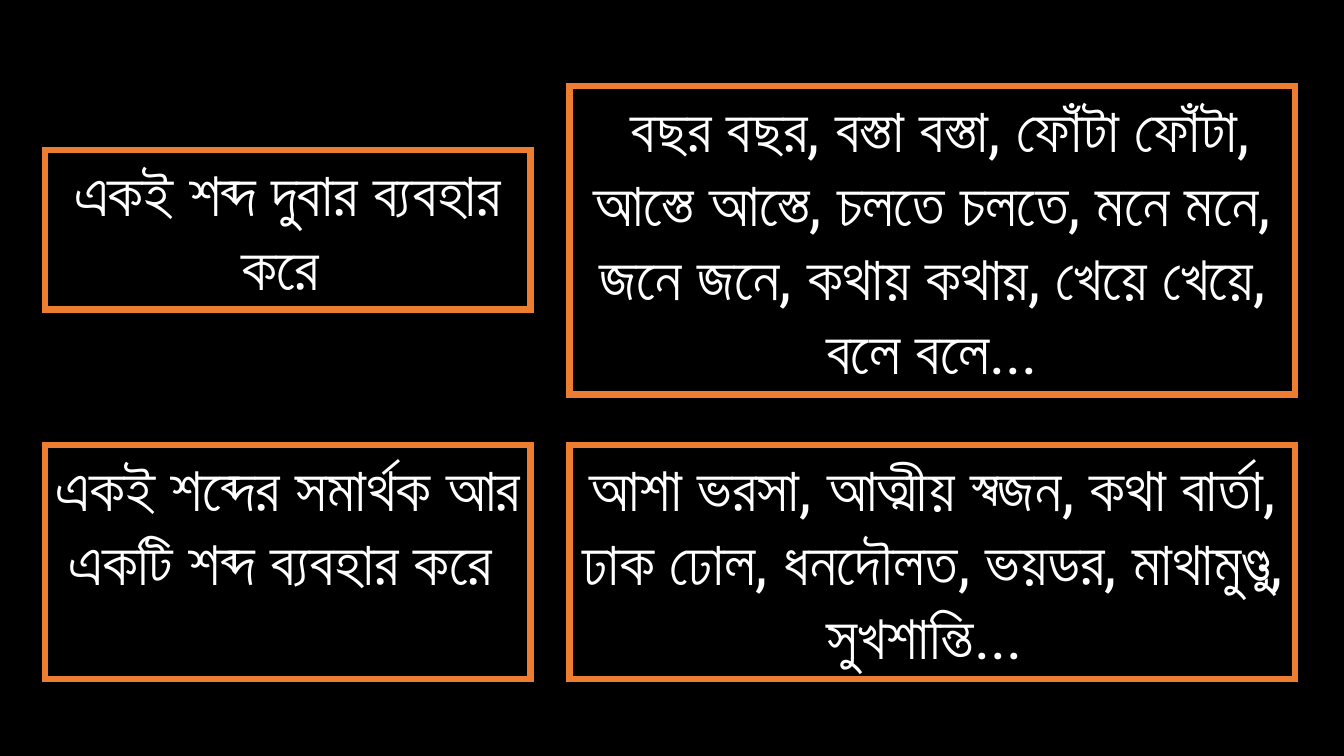
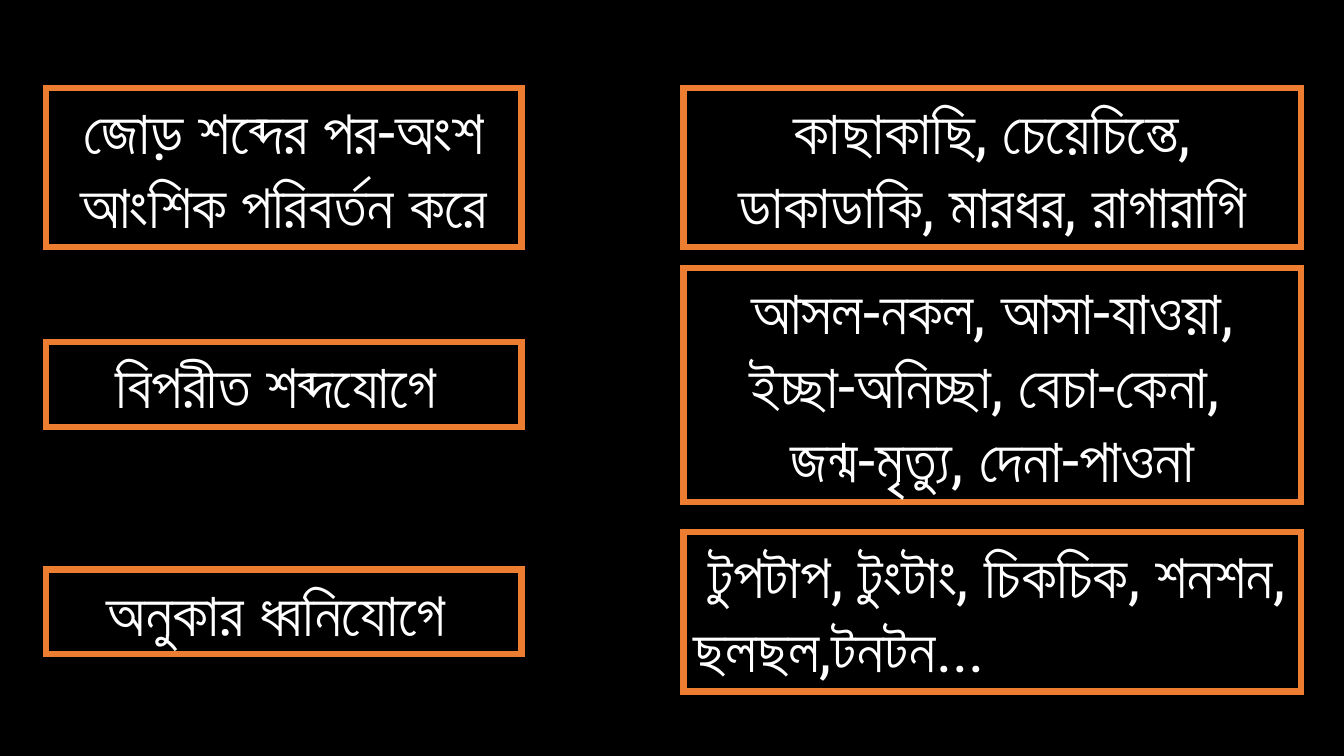
from dataclasses import dataclass

from lxml import etree
from pptx import Presentation
from pptx.dml.color import RGBColor
from pptx.enum import shapes, text
from pptx.oxml import ns
from pptx.util import Pt


@dataclass(frozen=True)
class Theme:
    background: RGBColor = RGBColor(0x00, 0x00, 0x00)
    ink: RGBColor = RGBColor(0xFF, 0xFF, 0xFF)
    frame: RGBColor = RGBColor(0xED, 0x7D, 0x31)
    frame_width: float = 4.5
    font: str = "Roboto"
    size: float = 44
    line_pitch: float = 53.28
    padding: float = 7.2


THEME = Theme()
CENTER, LEFT = text.PP_ALIGN.CENTER, text.PP_ALIGN.LEFT


def style_run(r):
    """Use the theme font for Latin and for complex scripts."""
    r.font.name = THEME.font
    r.font.size = Pt(THEME.size)
    r.font.color.rgb = THEME.ink
    cs = etree.SubElement(r.font._element, ns.qn("a:cs"))
    cs.set("typeface", THEME.font)


def style_frame(sp):
    """Give the shape a sharp-cornered outline and no fill."""
    sp.shadow.inherit = False
    sp.fill.background()
    sp.line.color.rgb = THEME.frame
    sp.line.width = Pt(THEME.frame_width)
    outline = sp._element.spPr.find(ns.qn("a:ln"))
    etree.SubElement(outline, ns.qn("a:miter")).set("lim", "800000")


def add_framed_text(slide, left, top, width, lines, words, align=CENTER):
    """Draw a framed box that is tall enough for the given number of lines."""
    height = lines * THEME.line_pitch + THEME.padding
    sp = slide.shapes.add_shape(shapes.MSO_SHAPE.RECTANGLE,
                                Pt(left), Pt(top), Pt(width), Pt(height))
    style_frame(sp)
    tf = sp.text_frame
    tf.word_wrap = True
    tf.auto_size = text.MSO_AUTO_SIZE.SHAPE_TO_FIT_TEXT
    tf.vertical_anchor = text.MSO_ANCHOR.TOP
    p = tf.paragraphs[0]
    p.text = words
    p.alignment = align
    for r in p.runs:
        style_run(r)


def add_column(slide, left, width, boxes):
    """Place boxes, each (top, lines, words[, align]), in one column."""
    for top, lines, words, *align in boxes:
        add_framed_text(slide, left, top, width, lines, words, *align)


def add_rules_slide(prs, *columns):
    slide = prs.slides.add_slide(prs.slide_layouts[6])
    slide.background.fill.solid()
    slide.background.fill.fore_color.rgb = THEME.background
    for left, width, boxes in columns:
        add_column(slide, left, width, boxes)


REPETITION_RULES = [
    (107.3, 2, "একই শব্দ দুবার ব্যবহার করে "),
    (317.8, 3, "একই শব্দের সমার্থক আর একটি শব্দ ব্যবহার করে "),
]
REPETITION_EXAMPLES = [
    (61.5, 4, " বছর বছর, বস্তা বস্তা, ফোঁটা ফোঁটা, আস্তে আস্তে, চলতে চলতে, "
              "মনে মনে, জনে জনে, কথায় কথায়, খেয়ে খেয়ে, বলে বলে..."),
    (317.8, 3, "আশা ভরসা, আত্মীয় স্বজন, কথা বার্তা, ঢাক ঢোল, ধনদৌলত, ভয়ডর, "
               "মাথামুণ্ডু, সুখশান্তি... "),
]
VARIATION_RULES = [
    (62.8, 2, "জোড় শব্দের পর-অংশ আংশিক পরিবর্তন করে"),
    (244.5, 1, "বিপরীত শব্দযোগে "),
    (406.8, 1, "অনুকার ধ্বনিযোগে "),
]
VARIATION_EXAMPLES = [
    (62.8, 2, "কাছাকাছি, চেয়েচিন্তে, ডাকাডাকি, মারধর, রাগারাগি"),
    (191.5, 3, "আসল-নকল, আসা-যাওয়া, ইচ্ছা-অনিচ্ছা, বেচা-কেনা, \v"
               "জন্ম-মৃত্যু, দেনা-পাওনা"),
    (380.2, 2, " টুপটাপ, টুংটাং, চিকচিক, শনশন, ছলছল,টনটন...", LEFT),
]


def main():
    prs = Presentation()
    prs.slide_width, prs.slide_height = Pt(960), Pt(540)
    add_rules_slide(prs, (32, 347, REPETITION_RULES),
                    (406.8, 518.4, REPETITION_EXAMPLES))
    add_rules_slide(prs, (32.7, 339.8, VARIATION_RULES),
                    (488.2, 441, VARIATION_EXAMPLES))
    prs.save("out.pptx")


if __name__ == "__main__":
    main()
